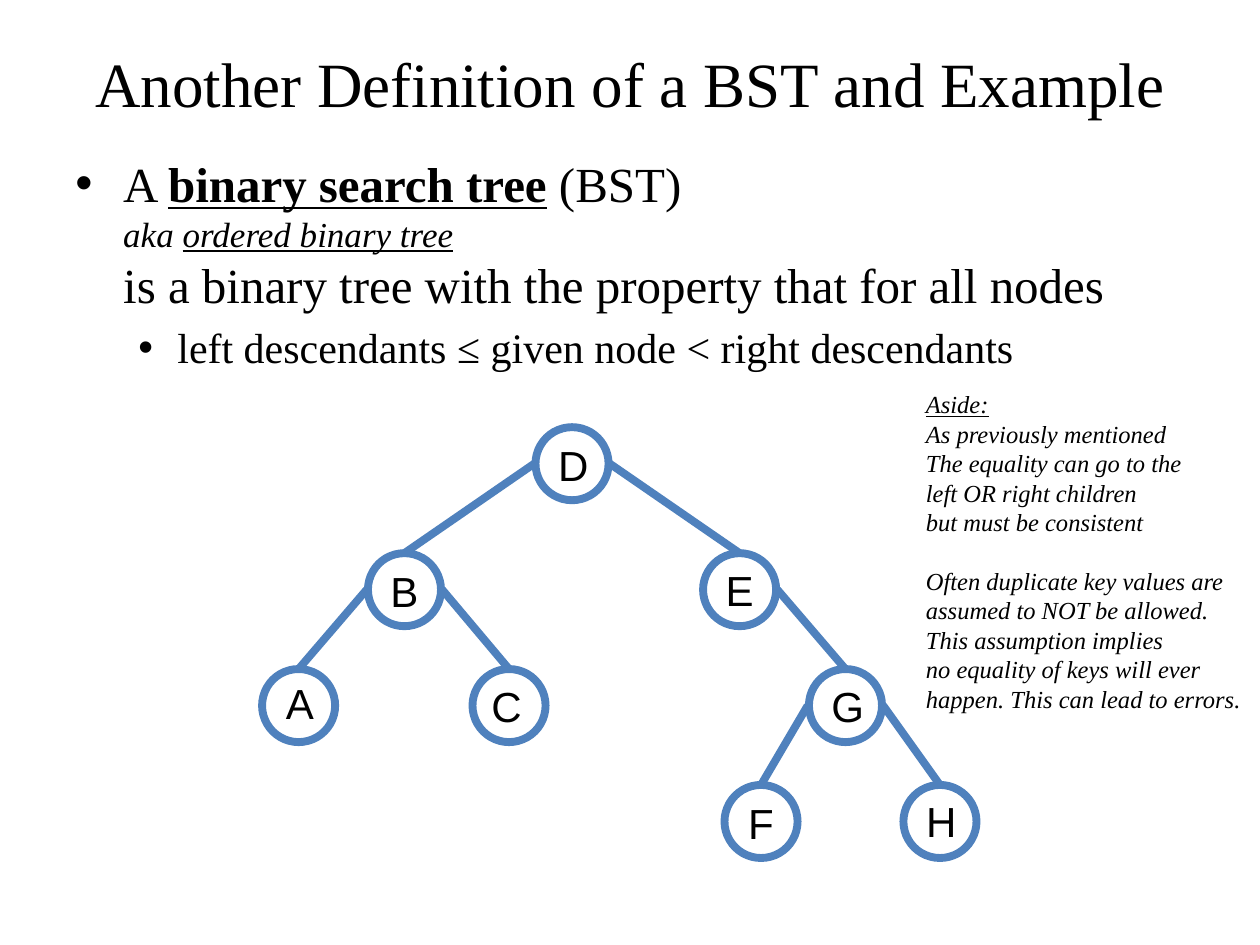
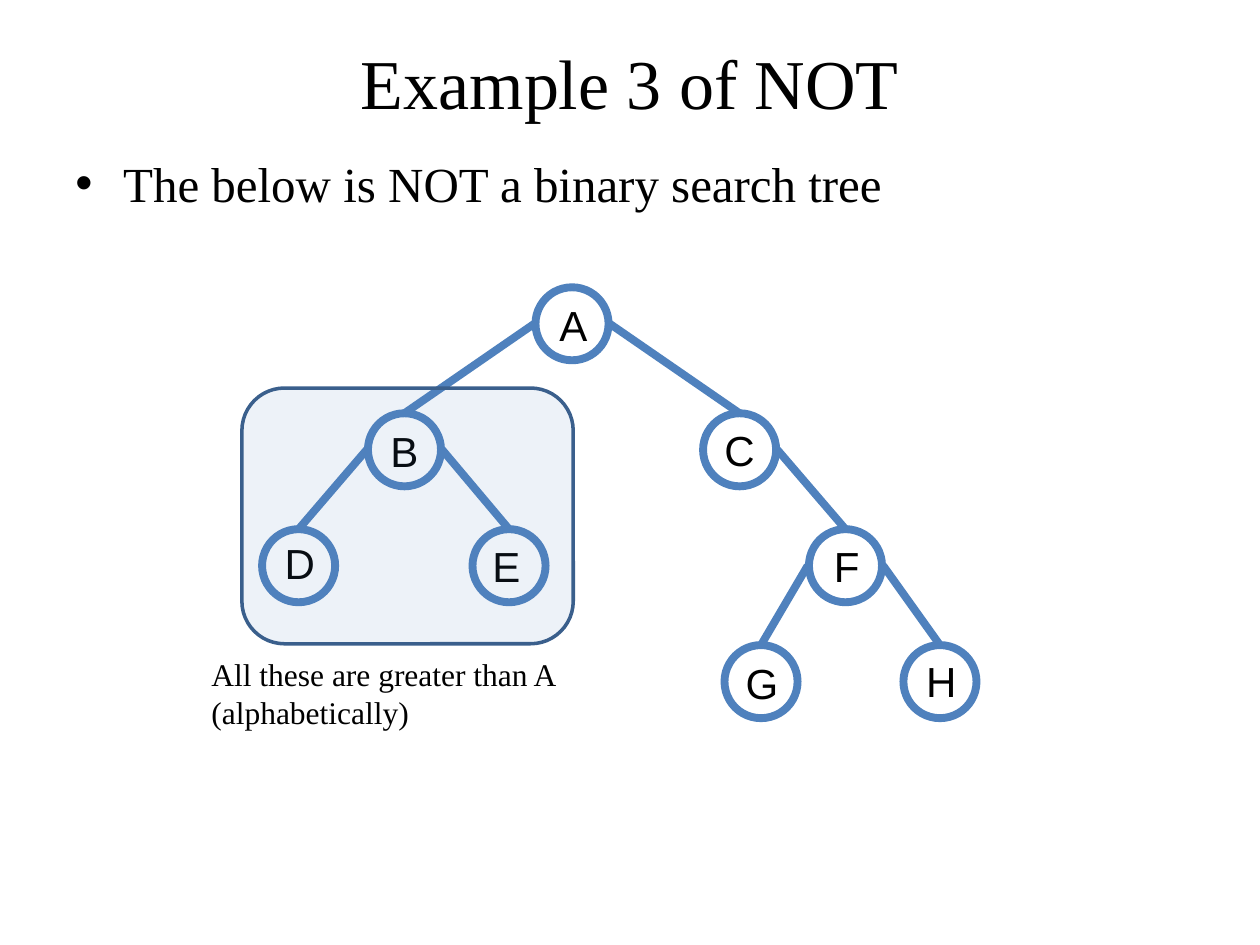
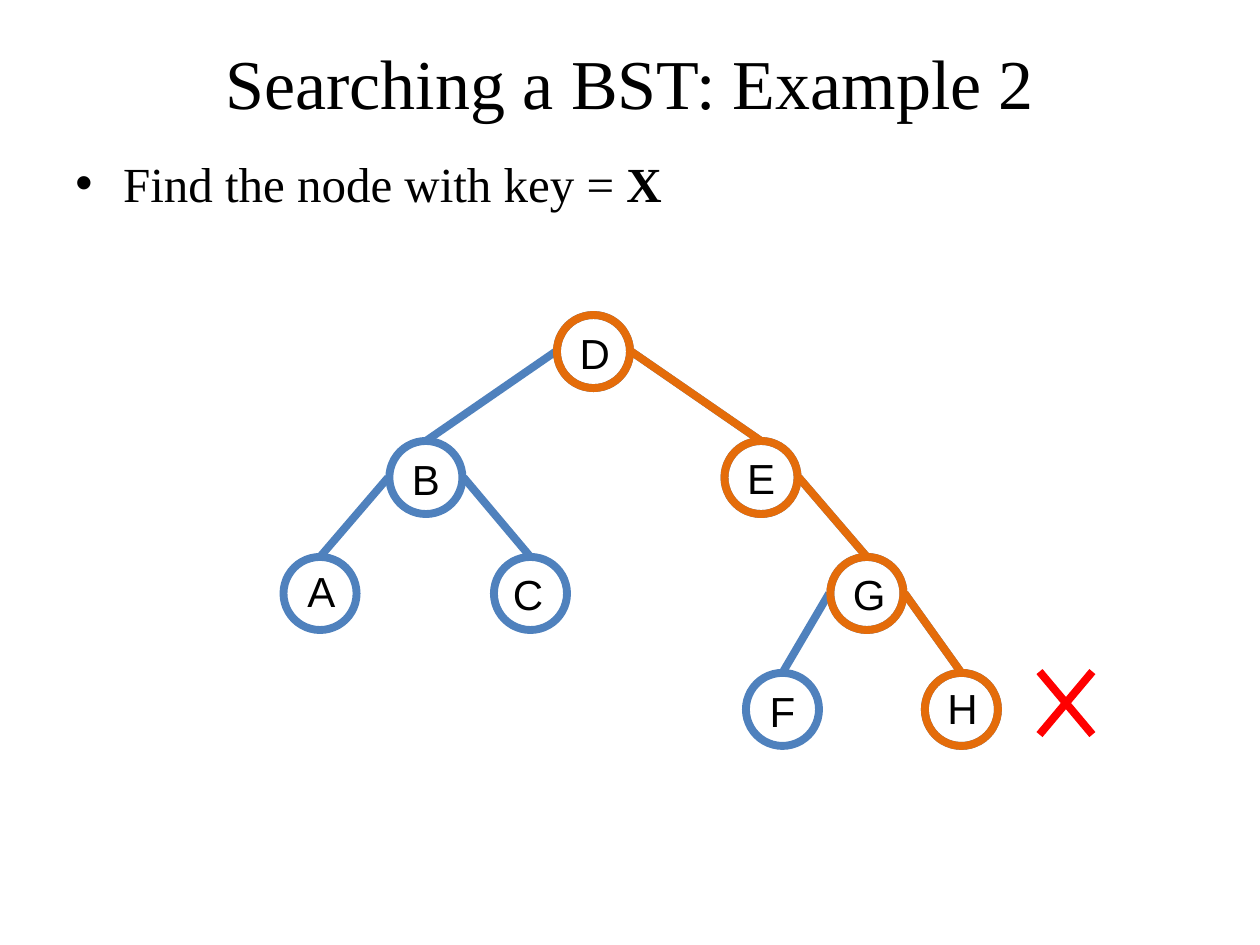
from collections import namedtuple

from lxml.etree import SubElement
from pptx import Presentation
from pptx.dml.color import RGBColor
from pptx.enum.shapes import MSO_CONNECTOR, MSO_SHAPE
from pptx.enum.text import MSO_ANCHOR, MSO_AUTO_SIZE, PP_ALIGN
from pptx.oxml.ns import qn
from pptx.util import Inches, Pt

BLACK = RGBColor(0x00, 0x00, 0x00)
BLUE = RGBColor(0x4F, 0x81, 0xBD)
DARK_BLUE = RGBColor(0x3A, 0x5F, 0x8C)
ORANGE = RGBColor(0xE4, 0x6C, 0x0A)
RED = RGBColor(0xFF, 0x00, 0x00)
SERIF = "Times New Roman"
SANS = "Arial"

Box = namedtuple("Box", "left top width height")
Slot = namedtuple("Slot", "left top label_shift label_drop")

TITLE_BOX = Box(0.5, 0.3, 9, 0.7)
BODY_LEFT, BODY_TOP, BODY_WIDTH = 0.5, 1.17, 9
NODE_SIZE = 0.58
TREE_WIDTH, TREE_HEIGHT = 5.67, 3.42
LABEL_WIDTH, LABEL_HEIGHT = 0.44, 0.5
THICK = 4.5
BULLET_INDENTS = [(0.38, -0.38), (0.81, -0.31)]

SLOTS = {
    "root": Slot(2.17, 0, 0.01, 0.05),
    "left": Slot(0.84, 1, 0, 0.05),
    "right": Slot(3.5, 1, 0, 0.04),
    "left.left": Slot(0, 1.92, 0.01, 0.02),
    "left.right": Slot(1.67, 1.92, -0.02, 0.04),
    "right.right": Slot(4.34, 1.92, 0.01, 0.04),
    "right.right.left": Slot(3.67, 2.84, 0, 0.05),
    "right.right.right": Slot(5.09, 2.84, 0.01, 0.03),
}
RIGHT_PATH = ["root", "right", "right.right", "right.right.right"]


def to_inches(box):
    return [Inches(length) for length in box]


def style_font(font, size, name):
    font.size = Pt(size)
    font.name = name
    font.color.rgb = BLACK


def add_text_box(shapes, box, wrap=True):
    frame = shapes.add_textbox(*to_inches(box)).text_frame
    frame.word_wrap = wrap
    frame.auto_size = MSO_AUTO_SIZE.NONE if wrap else MSO_AUTO_SIZE.SHAPE_TO_FIT_TEXT
    return frame


def next_paragraph(frame):
    first = frame.paragraphs[0]
    return frame.add_paragraph() if first.runs else first


def add_spans(para, spans):
    for text, style in spans:
        for index, line in enumerate(text.split("\n")):
            if index:
                para.add_line_break()
            if line:
                span = para.add_run()
                span.text = line
                for key, value in style.items():
                    setattr(span.font, key, value)


def add_bullet(frame, spans, size, level=0):
    para = next_paragraph(frame)
    para.level = level
    properties = para._p.get_or_add_pPr()
    margin, indent = BULLET_INDENTS[level]
    properties.set("marL", str(Inches(margin)))
    properties.set("indent", str(Inches(indent)))
    spacing = SubElement(properties, qn("a:spcBef"))
    SubElement(spacing, qn("a:spcPct"), val="20000")
    SubElement(properties, qn("a:buFont"), typeface=SANS)
    SubElement(properties, qn("a:buChar"), char="•")
    style_font(para.font, size, SERIF)
    add_spans(para, spans)


def add_note(shapes, box, paragraphs, size, italic=False):
    frame = add_text_box(shapes, box, wrap=False)
    for spans in paragraphs:
        para = next_paragraph(frame)
        style_font(para.font, size, SERIF)
        para.font.italic = italic
        add_spans(para, spans)
    return frame


def add_line(shapes, start, end, color):
    line = shapes.add_connector(
        MSO_CONNECTOR.STRAIGHT, *[Inches(length) for length in (*start, *end)]
    )
    line.line.color.rgb = color
    line.line.width = Pt(THICK)
    SubElement(line._element.spPr, qn("a:effectLst"))


def add_nodes(shapes, tree, names, color):
    for name in names:
        slot = SLOTS[name]
        box = Box(tree.left + slot.left, tree.top + slot.top, NODE_SIZE, NODE_SIZE)
        node = shapes.add_shape(MSO_SHAPE.OVAL, *to_inches(box))
        node.shadow.inherit = False
        node.fill.background()
        node.line.color.rgb = color
        node.line.width = Pt(THICK)


def add_labels(shapes, tree, letters):
    for slot, letter in zip(SLOTS.values(), letters):
        left = tree.left + slot.left + (NODE_SIZE - LABEL_WIDTH) / 2 + slot.label_shift
        top = tree.top + slot.top + slot.label_drop
        frame = add_text_box(shapes, Box(left, top, LABEL_WIDTH, LABEL_HEIGHT), wrap=False)
        frame.vertical_anchor = MSO_ANCHOR.MIDDLE
        para = frame.paragraphs[0]
        para.alignment = PP_ALIGN.CENTER
        style_font(para.font, 24, SANS)
        add_spans(para, [(letter, {})])


def add_edges(shapes, tree, names, color):
    for name in names:
        if name == "root":
            continue
        parent_name, _, side = name.rpartition(".")
        parent, child = SLOTS[parent_name or "root"], SLOTS[name]
        side_offset = NODE_SIZE + 0.01 if side == "right" else -0.01
        start = (
            tree.left + parent.left + side_offset,
            tree.top + parent.top + NODE_SIZE / 2,
        )
        end = (tree.left + child.left + NODE_SIZE / 2, tree.top + child.top)
        add_line(shapes, start, end, color)


def add_tree(page, tree, letters):
    shapes = page.shapes.add_group_shape().shapes
    add_nodes(shapes, tree, SLOTS, BLUE)
    add_labels(shapes, tree, letters)
    add_edges(shapes, tree, SLOTS, BLUE)


def add_cross(shapes, box):
    right, bottom = box.left + box.width, box.top + box.height
    add_line(shapes, (box.left, bottom), (right, box.top), RED)
    add_line(shapes, (box.left, box.top), (right, bottom), RED)


def add_failed_search(page, tree):
    shapes = page.shapes.add_group_shape().shapes
    add_nodes(shapes, tree, RIGHT_PATH, ORANGE)
    add_edges(shapes, tree, RIGHT_PATH, ORANGE)
    add_cross(shapes, Box(tree.left + 6, tree.top + 2.83, 0.42, 0.5))


def add_marked_subtree(page, tree):
    shapes = page.shapes.add_group_shape().shapes
    box = Box(tree.left - 0.16, tree.top + 0.8, 2.63, 2.03)
    region = shapes.add_shape(MSO_SHAPE.ROUNDED_RECTANGLE, *to_inches(box))
    region.shadow.inherit = False
    region.fill.solid()
    region.fill.fore_color.rgb = BLUE
    color = region._element.spPr.find(qn("a:solidFill")).find(qn("a:srgbClr"))
    SubElement(color, qn("a:alpha"), val="10000")
    region.line.color.rgb = DARK_BLUE
    region.line.width = Pt(2)
    add_note(
        shapes,
        Box(tree.left - 0.5, tree.top + 2.87, 2.97, 0.71),
        [[("All these are greater than A", {})], [("(alphabetically)", {})]],
        18,
    )


def add_page(deck, title, title_size, body_height):
    page = deck.slides.add_slide(deck.slide_layouts[6])
    frame = add_text_box(page.shapes, TITLE_BOX)
    frame.vertical_anchor = MSO_ANCHOR.MIDDLE
    para = frame.paragraphs[0]
    para.alignment = PP_ALIGN.CENTER
    style_font(para.font, title_size, SERIF)
    add_spans(para, [(title, {})])
    body = add_text_box(page.shapes, Box(BODY_LEFT, BODY_TOP, BODY_WIDTH, body_height))
    return page, body


def add_aside(page, box):
    lines = [
        "As previously mentioned",
        "The equality can go to the",
        "left OR right children",
        "but must be consistent",
        "Often duplicate key values are",
        "assumed to NOT be allowed.",
        "This assumption implies\nno equality of keys will ever",
        "happen. This can lead to errors.",
    ]
    paragraphs = [[("Aside:", {"underline": True})]] + [[(line, {})] for line in lines]
    frame = add_note(page.shapes, box, paragraphs, 14, italic=True)
    frame.paragraphs[5].space_before = Pt(16.9)


def build_definition(deck):
    page, body = add_page(deck, "Another Definition of a BST and Example", 36, 5.53)
    aka = {"size": Pt(20), "italic": True}
    add_bullet(
        body,
        [
            ("A ", {}),
            ("binary search tree", {"bold": True, "underline": True}),
            (" (BST)\n", {}),
            ("aka ", aka),
            ("ordered binary tree\n", {**aka, "underline": True}),
            ("is a binary tree with the property that for all nodes", {}),
        ],
        28,
    )
    add_bullet(body, [("left descendants ≤ given node < right descendants", {})], 24, level=1)
    add_tree(page, Box(2.08, 3.39, TREE_WIDTH, TREE_HEIGHT), "DBEACGFH")
    add_aside(page, Box(7.25, 3.04, 2.72, 2.69))


def build_counterexample(deck):
    page, body = add_page(deck, "Example 3 of NOT", 40, 0.67)
    add_bullet(body, [("The below is NOT a binary search tree", {})], 28)
    tree = Box(2.08, 2.28, TREE_WIDTH, TREE_HEIGHT)
    add_tree(page, tree, "ABCDEFGH")
    add_marked_subtree(page, tree)


def build_search(deck):
    page, body = add_page(deck, "Searching a BST: Example 2", 40, 0.67)
    add_bullet(body, [("Find the node with key = ", {}), ("X", {"bold": True})], 28)
    tree = Box(2.25, 2.5, TREE_WIDTH, TREE_HEIGHT)
    add_tree(page, tree, "DBEACGFH")
    add_failed_search(page, tree)


def main():
    deck = Presentation()
    deck.slide_width = Inches(10)
    deck.slide_height = Inches(7.5)
    build_definition(deck)
    build_counterexample(deck)
    build_search(deck)
    deck.save("out.pptx")


if __name__ == "__main__":
    main()
